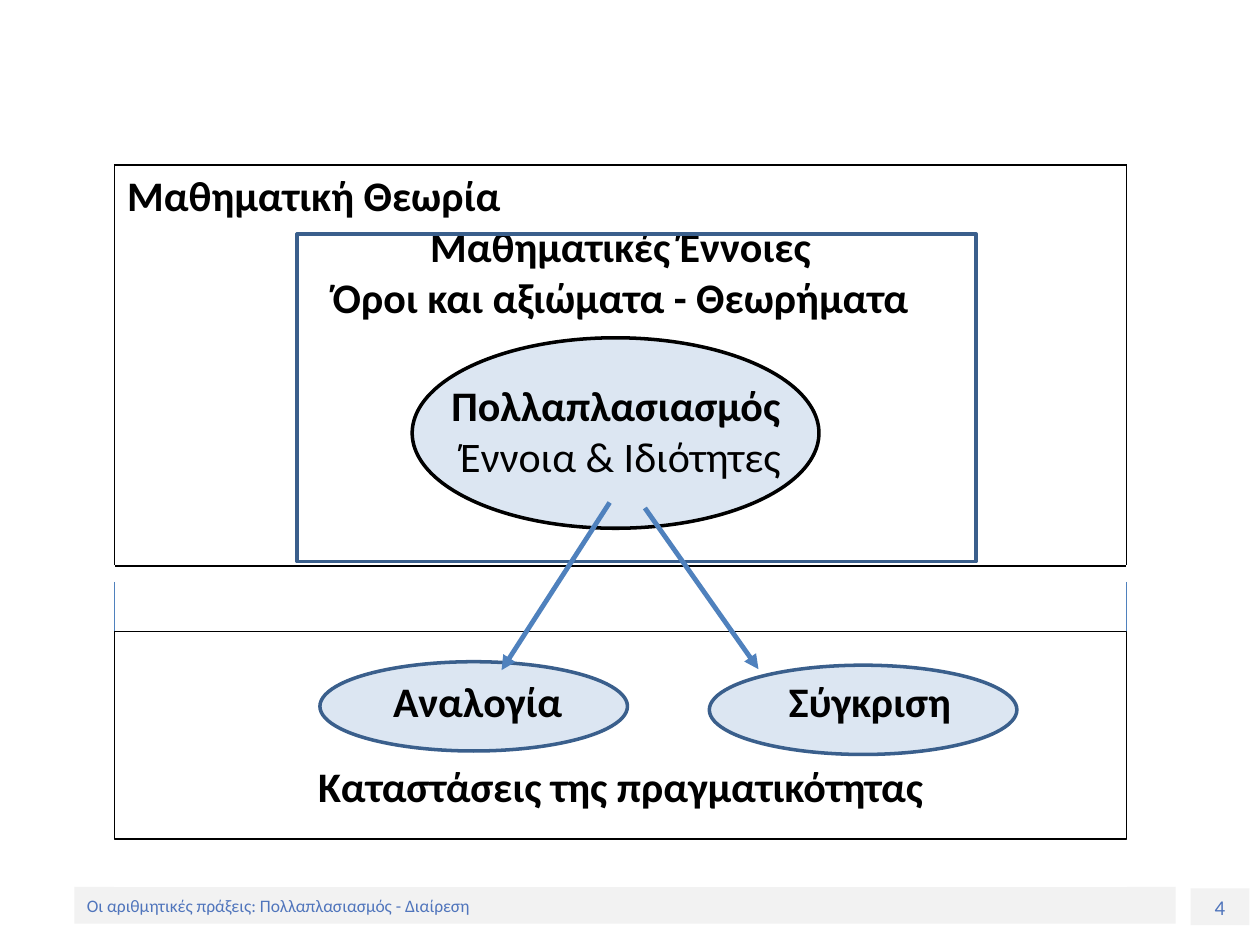
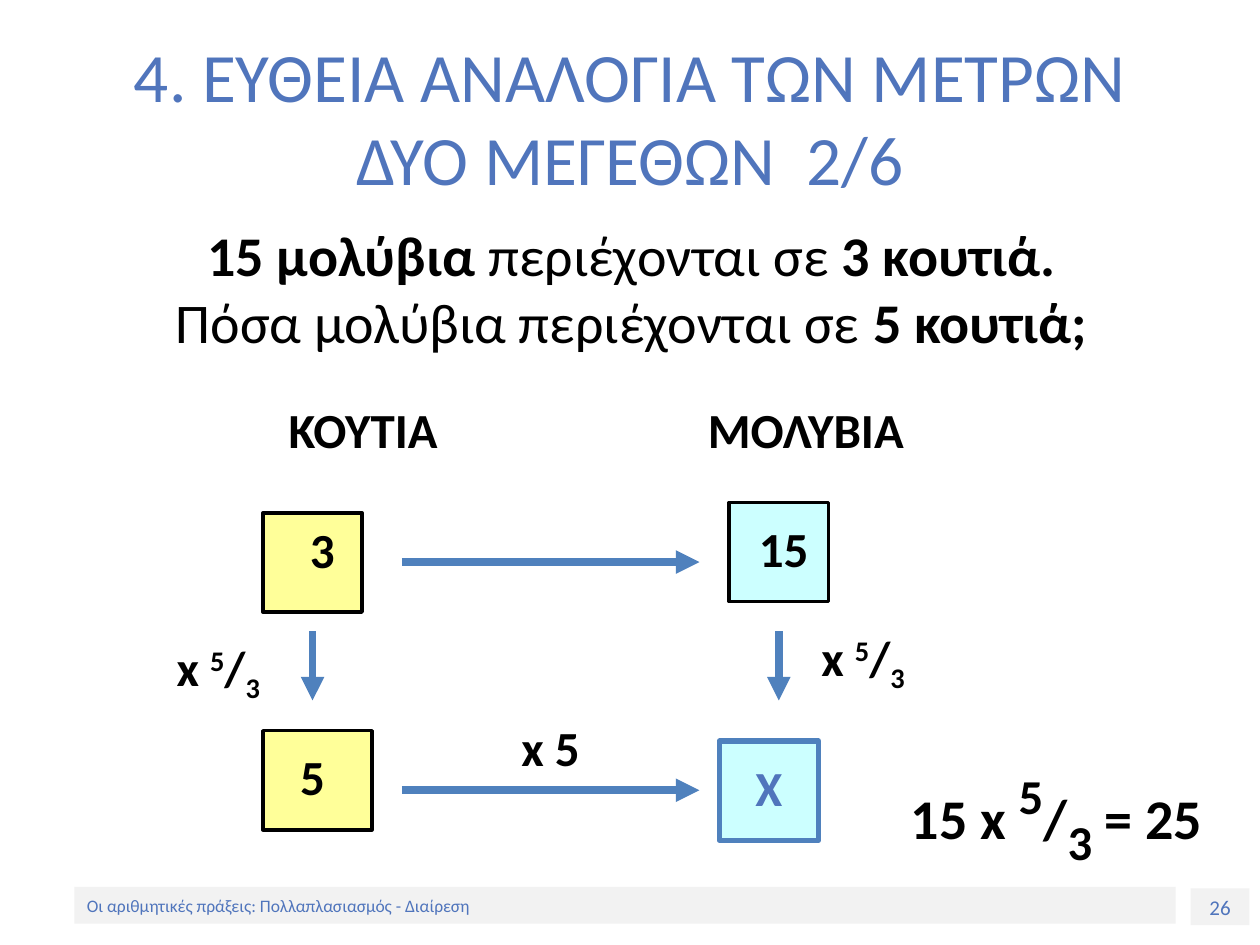
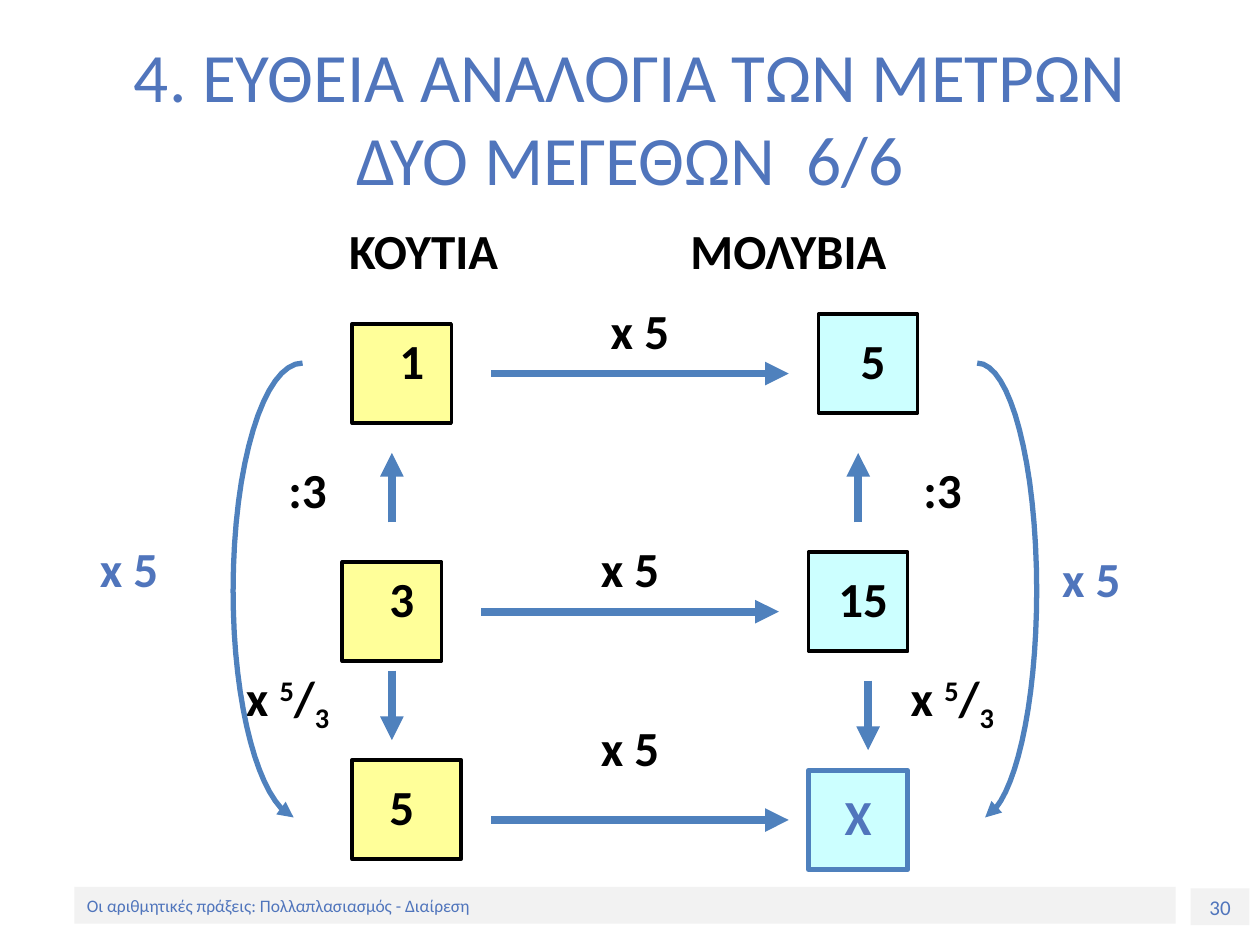
from dataclasses import dataclass
from typing import Optional

from lxml import etree
from pptx import Presentation
from pptx.dml.color import RGBColor
from pptx.enum.shapes import MSO_CONNECTOR, MSO_SHAPE
from pptx.enum.text import MSO_ANCHOR, MSO_AUTO_SIZE, PP_ALIGN
from pptx.oxml.ns import qn
from pptx.util import Cm, Pt

FONT = "Calibri"
BLACK, WHITE = "000000", "FFFFFF"
ACCENT, ARROW, OUTLINE = "5075BC", "4F81BD", "3A5F8C"
BAND, PALE_BLUE = "F2F2F2", "DCE6F2"
YELLOW, CYAN = "FFFF99", "CCFFFF"

TITLE_ONLY, BLANK = 5, 6
FOOTER = "Οι αριθμητικές πράξεις: Πολλαπλασιασμός - Διαίρεση"
TITLE = "4. ΕΥΘΕΙΑ ΑΝΑΛΟΓΙΑ ΤΩΝ ΜΕΤΡΩΝ ΔΥΟ ΜΕΓΕΘΩΝ  {}/6"
COLUMN_HEADS = "\tΚΟΥΤΙΑ\tΜΟΛΥΒΙΑ"
LABEL_HEIGHT = 1.45


@dataclass
class Run:
    text: str
    bold: Optional[bool] = None
    size: Optional[float] = None
    baseline: int = 0


@dataclass
class NumberStyle:
    """A square and the offset and width of the number on it, in cm."""
    fill: str
    label_left: float
    label_top: float
    label_width: float
    width: float = 2
    line: str = BLACK
    line_width: float = 2
    color: str = BLACK


BOXES = NumberStyle(YELLOW, 0.4, 0, 1.6)
LAST_BOXES = NumberStyle(YELLOW, -0.3, 0.2, 2.6, width=2.2)
PENCILS = NumberStyle(CYAN, -0.2, 0.2, 2.6)
UNKNOWN = NumberStyle(CYAN, 0.2, 0.2, 1.6, line=ARROW, line_width=3, color=ACCENT)


def fraction(size=None):
    return [Run("5", size=size, baseline=30000), Run("/"),
            Run("3", size=size, baseline=-25000)]


TIMES_FRACTION = [Run("x "), *fraction()]


def rgb(color):
    return RGBColor.from_string(color)


def lengths(*values):
    return [Cm(value) for value in values]


def write(paragraph, content, size, color=BLACK, bold=False,
          align=PP_ALIGN.CENTER, space_before=None, tabs=()):
    """Fill a paragraph with a string or a list of runs; tabs are in cm."""
    paragraph.alignment = align
    if space_before:
        paragraph.space_before = Pt(space_before)
    if tabs:
        tab_list = etree.SubElement(paragraph._p.get_or_add_pPr(), qn("a:tabLst"))
        for position in tabs:
            etree.SubElement(tab_list, qn("a:tab"), pos=str(Cm(position)), algn="l")
    font = paragraph.font
    font.name, font.size, font.bold = FONT, Pt(size), bold
    font.color.rgb = rgb(color)
    for part in [Run(content)] if isinstance(content, str) else content:
        run = paragraph.add_run()
        run.text = part.text
        if part.bold is not None:
            run.font.bold = part.bold
        if part.size:
            run.font.size = Pt(part.size)
        if part.baseline:
            run._r.get_or_add_rPr().set("baseline", str(part.baseline))


def add_label(slide, left, top, width, content, size=28, bold=True, **style):
    text_box = slide.shapes.add_textbox(*lengths(left, top, width, LABEL_HEIGHT))
    frame = text_box.text_frame
    frame.word_wrap = True
    write(frame.paragraphs[0], content, size, bold=bold, **style)
    return frame


def add_preset(slide, preset, box, fill=None, line=None, line_width=2):
    shape = slide.shapes.add_shape(preset, *lengths(*box))
    shape.shadow.inherit = False
    if fill:
        shape.fill.solid()
        shape.fill.fore_color.rgb = rgb(fill)
    else:
        shape.fill.background()
    if line:
        shape.line.color.rgb = rgb(line)
        shape.line.width = Pt(line_width)
    else:
        shape.line.fill.background()
    return shape


def add_arrowhead(shape):
    line = shape._element.spPr.find(qn("a:ln"))
    etree.SubElement(line, qn("a:tailEnd"), type="triangle")


def add_line(slide, start, end, width=4.5, arrow=True):
    connector = slide.shapes.add_connector(
        MSO_CONNECTOR.STRAIGHT, *lengths(*start, *end))
    connector.line.color.rgb = rgb(ARROW)
    connector.line.width = Pt(width)
    if arrow:
        add_arrowhead(connector)
    etree.SubElement(connector._element.spPr, qn("a:effectLst"))


def curve_points(controls, steps=16):
    """Points along a cubic curve, without its start."""
    weights = (1, 3, 3, 1)
    for step in range(1, steps + 1):
        t = step / steps
        yield tuple(
            int(sum(Cm(control[axis]) * weight * (1 - t) ** (3 - i) * t ** i
                    for i, (control, weight) in enumerate(zip(controls, weights))))
            for axis in (0, 1))


def add_arc_arrow(slide, start, bulge, end):
    """Curved arrow down the slide; start, bulge and end are x in cm."""
    top, middle, bottom = 7.32, 11.91, 16.48
    upper = [(start, top), (start + 0.56 * (bulge - start), top),
             (bulge, 9.37), (bulge, middle)]
    lower = [(bulge, middle), (bulge, 14.22),
             (bulge + 0.43 * (end - bulge), 16.18), (end, bottom)]
    builder = slide.shapes.build_freeform(Cm(start), Cm(top))
    builder.add_line_segments([*curve_points(upper), *curve_points(lower)], close=False)
    arc = builder.convert_to_shape()
    arc.shadow.inherit = False
    arc.fill.background()
    arc.line.color.rgb = rgb(ARROW)
    arc.line.width = Pt(3)
    add_arrowhead(arc)


def add_number(slide, left, top, text, style):
    add_preset(slide, MSO_SHAPE.RECTANGLE, (left, top, style.width, 2),
               style.fill, style.line, style.line_width)
    add_label(slide, left + style.label_left, top + style.label_top,
              style.label_width, text, color=style.color)


def add_footer(slide, number):
    for box, text, size, align in (
            ((24, 17.91, 1.19, 0.74), str(number), 12, PP_ALIGN.CENTER),
            ((1.5, 17.88, 22.2, 0.74), FOOTER, 10, PP_ALIGN.LEFT)):
        band = add_preset(slide, MSO_SHAPE.RECTANGLE, box, BAND)
        band.text_frame.vertical_anchor = MSO_ANCHOR.MIDDLE
        write(band.text_frame.paragraphs[0], text, size, ACCENT, align=align)


def add_slide(presentation, number, title=None):
    layout = presentation.slide_layouts[TITLE_ONLY if title else BLANK]
    slide = presentation.slides.add_slide(layout)
    add_footer(slide, number)
    if title:
        shape = slide.shapes.title
        shape.left, shape.top, shape.width, shape.height = lengths(1.27, 0.76, 22.86, 3.18)
        shape.text_frame.auto_size = MSO_AUTO_SIZE.NONE
        shape.text_frame.vertical_anchor = MSO_ANCHOR.MIDDLE
        write(shape.text_frame.paragraphs[0], title, 39.6, ACCENT)
    return slide


def format_cell(cell, left, right, top, bottom):
    """Give a cell no fill and 1 pt borders in the four colours."""
    properties = cell._tc.get_or_add_tcPr()
    for side, color in zip("LRTB", (left, right, top, bottom)):
        border = etree.SubElement(properties, qn(f"a:ln{side}"), w=str(Pt(1)))
        fill = etree.SubElement(border, qn("a:solidFill"))
        etree.SubElement(fill, qn("a:srgbClr"), val=color)
    cell.fill.background()


def write_cell(cell, paragraphs):
    frame = cell.text_frame
    for index, (content, style) in enumerate(paragraphs):
        paragraph = frame.add_paragraph() if index else frame.paragraphs[0]
        write(paragraph, content, 24, **{"bold": True, **style})


def add_theory_table(slide):
    row_heights = (8.08, 1.09, 5.36)
    table = slide.shapes.add_table(
        3, 1, *lengths(2.31, 3.33, 20.4, sum(row_heights))).table
    table.first_row = table.horz_banding = False
    for row, height in zip(table.rows, row_heights):
        row.height = Cm(height)
    theory, gap, reality = (table.cell(row, 0) for row in range(3))
    format_cell(theory, BLACK, BLACK, BLACK, BLACK)
    format_cell(gap, WHITE, WHITE, BLACK, WHITE)
    format_cell(reality, WHITE, WHITE, WHITE, WHITE)
    write_cell(theory, [
        ("Μαθηματική Θεωρία", {"align": PP_ALIGN.LEFT}),
        ("Μαθηματικές Έννοιες", {}),
        ("Όροι και αξιώματα - Θεωρήματα", {}),
        ("Πολλαπλασιασμός ", {"space_before": 32}),
        ("Έννοια & Ιδιότητες", {"bold": False}),
    ])
    reality.margin_top = Cm(1.16)
    write_cell(reality, [
        ("\tΑναλογία\tΣύγκριση", {"align": PP_ALIGN.LEFT, "tabs": (5.36, 13.34)}),
        ("Καταστάσεις της πραγματικότητας", {"space_before": 19.5}),
    ])


def build_theory_slide(presentation):
    slide = add_slide(presentation, 4)
    for box, line in (((14.3, 13.41, 6.2, 1.8), OUTLINE),
                      ((6.45, 13.34, 6.2, 1.8), OUTLINE),
                      ((8.31, 6.81, 8.2, 3.84), BLACK)):
        add_preset(slide, MSO_SHAPE.OVAL, box, PALE_BLUE, line)
    add_theory_table(slide)
    add_preset(slide, MSO_SHAPE.RECTANGLE, (5.99, 4.72, 13.69, 6.6), line=OUTLINE)
    add_preset(slide, MSO_SHAPE.RECTANGLE, (2.31, 12.73, 20.4, 4.19),
               line=BLACK, line_width=1)
    add_line(slide, (12.29, 10.13), (10.11, 13.51), 2.75)
    add_line(slide, (13, 10.24), (15.29, 13.49), 2.75)
    for x in (22.71, 2.31):
        add_line(slide, (x, 11.73), (x, 12.73), 0.75, arrow=False)


def build_question_slide(presentation):
    slide = add_slide(presentation, 26, TITLE.format(2))
    question = add_label(
        slide, 1.3, 4.32, 22.86,
        [Run("15 μολύβια ", True), Run("περιέχονται σε "), Run("3 κουτιά.", True)],
        size=32, bold=False)
    write(question.add_paragraph(),
          [Run("Πόσα μολύβια περιέχονται σε "), Run("5 κουτιά;", True)], 32)
    add_label(slide, 4.09, 7.92, 16.41, COLUMN_HEADS,
              align=PP_ALIGN.LEFT, tabs=(1.48, 9.93))

    for left, top, text, style in ((5.3, 10.34, "3", BOXES),
                                   (14.7, 10.13, "15", PENCILS),
                                   (5.3, 14.73, "5", LAST_BOXES),
                                   (14.5, 14.94, "Χ", UNKNOWN)):
        add_number(slide, left, top, text, style)
    for y in (11.33, 15.93):
        add_line(slide, (8.1, y), (14.1, y))
    for x in (6.3, 15.7):
        add_line(slide, (x, 12.73), (x, 14.12))

    add_label(slide, 9.9, 14.33, 2.4, "x 5")
    add_label(slide, 2.9, 12.73, 3, TIMES_FRACTION)
    add_label(slide, 15.9, 12.52, 3, TIMES_FRACTION)
    add_label(slide, 17.9, 15.11, 6.8,
              [Run("15 x "), *fraction(48), Run(" = 25")], size=32)


def build_summary_slide(presentation):
    slide = add_slide(presentation, 30, TITLE.format(6))
    add_label(slide, 1.3, 4.32, 22.86, COLUMN_HEADS,
              align=PP_ALIGN.LEFT, tabs=(5.49, 12.37))

    for left, top, text, style in ((7.1, 6.53, "1", BOXES),
                                   (16.5, 6.33, "5", PENCILS),
                                   (6.9, 11.33, "3", BOXES),
                                   (16.3, 11.13, "15", PENCILS),
                                   (7.1, 15.32, "5", LAST_BOXES),
                                   (16.3, 15.53, "Χ", UNKNOWN)):
        add_number(slide, left, top, text, style)
    for left, y in ((9.9, 7.53), (9.7, 12.33), (9.9, 16.53)):
        add_line(slide, (left, y), (left + 6, y))
    for x, start, end in ((7.9, 10.53, 9.13), (17.3, 10.53, 9.13),
                          (7.9, 13.52, 14.92), (17.5, 13.72, 15.12)):
        add_line(slide, (x, start), (x, end))

    for left, top in ((11.7, 5.93), (11.5, 10.73), (11.5, 14.33)):
        add_label(slide, left, top, 2.4, "x 5")
    for left in (4.7, 17.5):
        add_label(slide, left, 9.13, 3, ":3")
    for left in (4.3, 17.7):
        add_label(slide, left, 13.33, 3, TIMES_FRACTION)
    for left, top in ((1.1, 10.73), (20.5, 10.93)):
        add_label(slide, left, top, 3, "x 5", color=ACCENT)
    add_arc_arrow(slide, start=19.7, bulge=20.9, end=19.86)
    add_arc_arrow(slide, start=6.1, bulge=4.7, end=5.92)


def main():
    presentation = Presentation()
    presentation.slide_width, presentation.slide_height = lengths(25.4, 19.05)
    build_theory_slide(presentation)
    build_question_slide(presentation)
    build_summary_slide(presentation)
    presentation.save("out.pptx")


if __name__ == "__main__":
    main()
